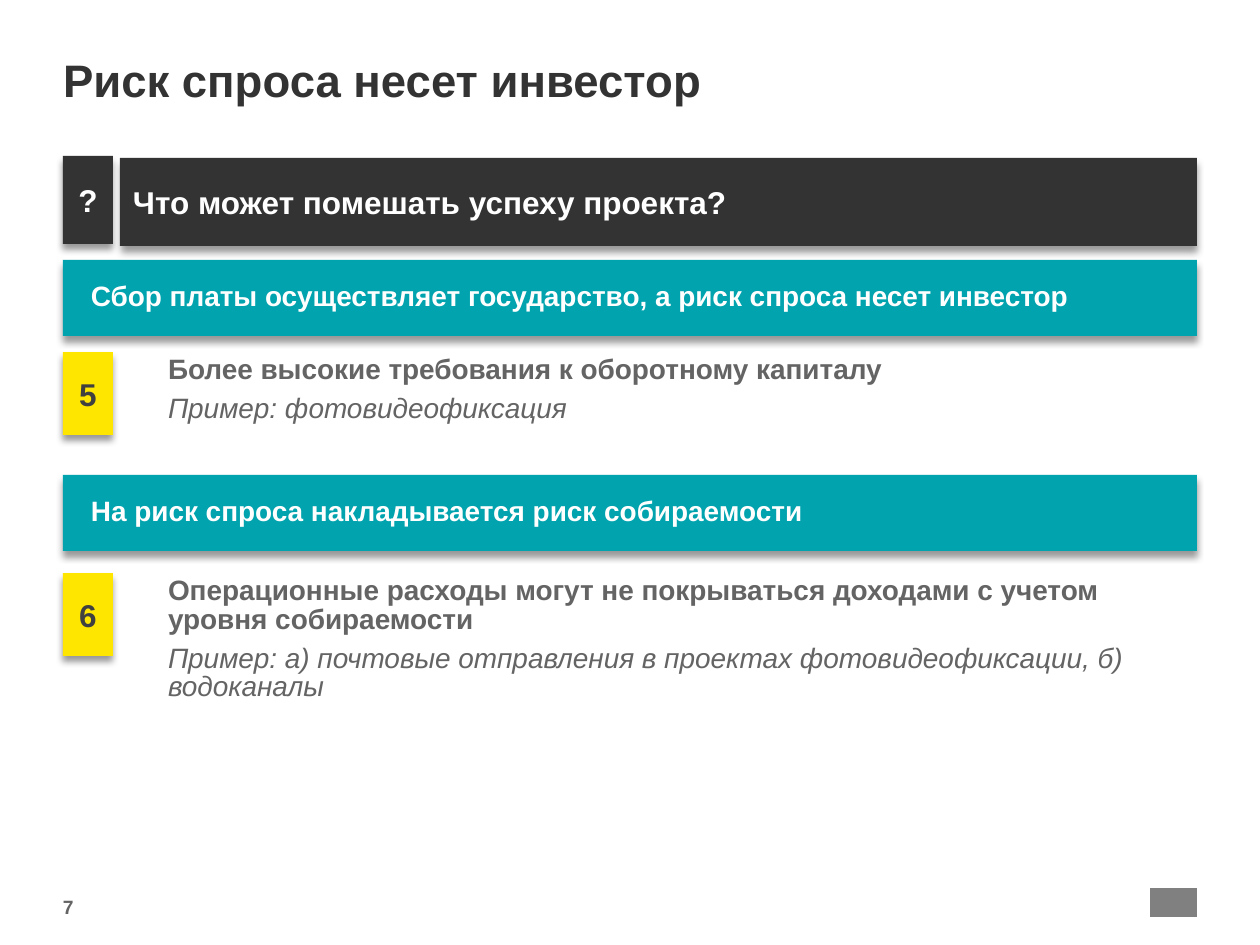
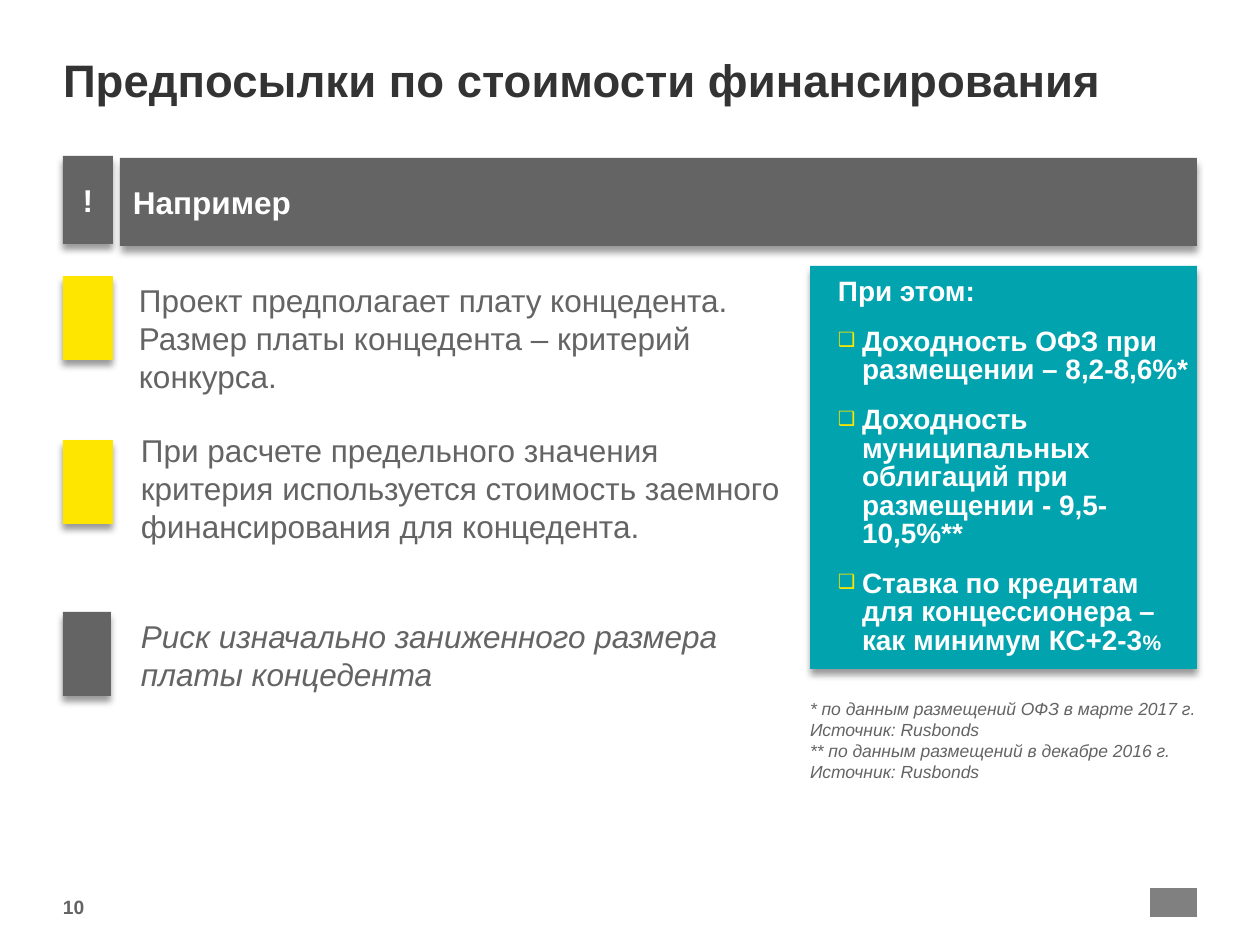
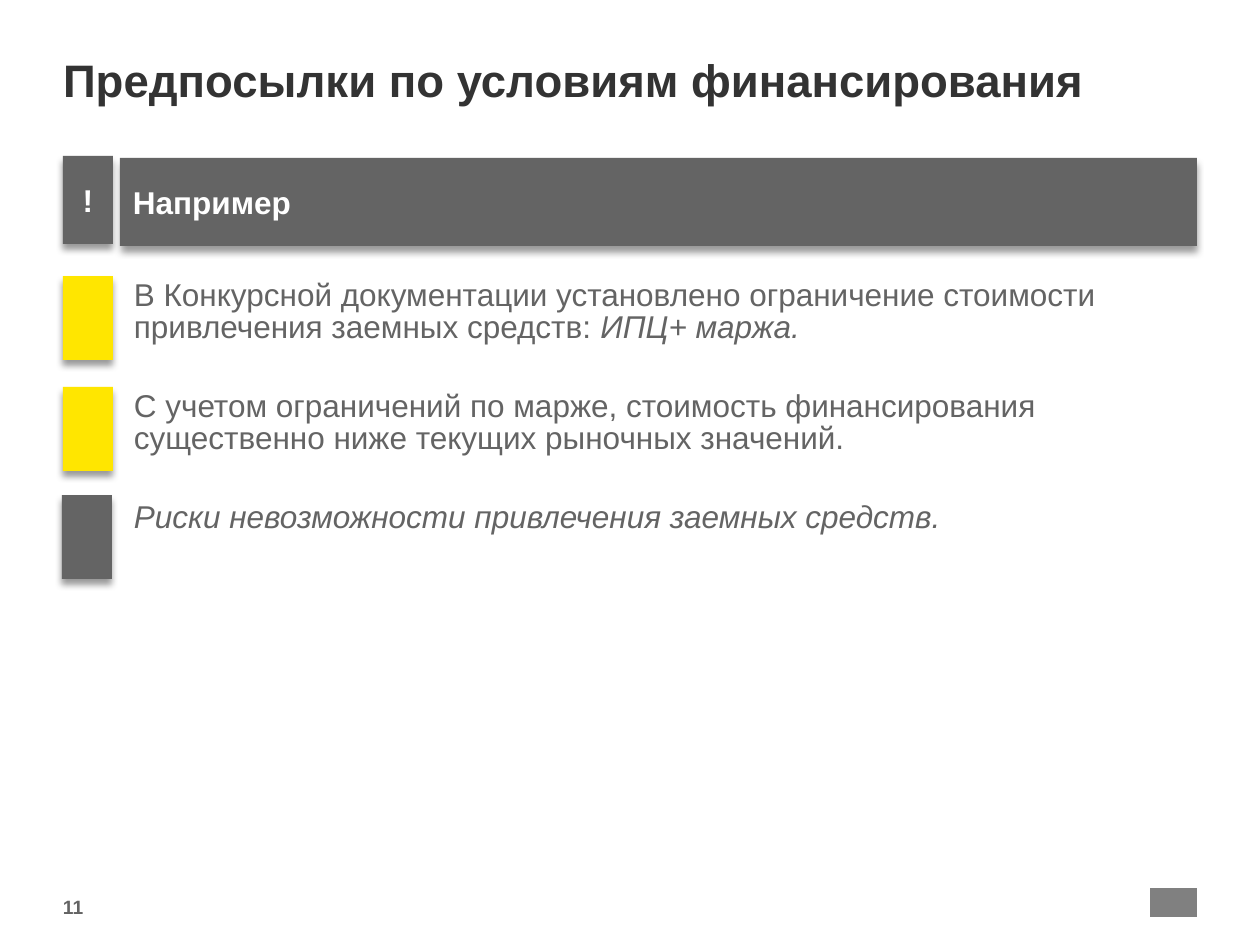
from dataclasses import dataclass, replace
from typing import Optional

from lxml.etree import SubElement
from pptx import Presentation
from pptx.dml.color import RGBColor
from pptx.enum.shapes import MSO_SHAPE
from pptx.enum.text import MSO_ANCHOR, MSO_AUTO_SIZE, PP_ALIGN
from pptx.oxml.ns import qn
from pptx.util import Emu, Pt

PX_PER_INCH = 126
TITLE_AND_CONTENT, TITLE_ONLY = 1, 5


@dataclass(frozen=True)
class Theme:
    font: str = "Arial"
    white: str = "FFFFFF"
    dark: str = "333333"
    digit: str = "404040"
    grey: str = "646464"
    logo: str = "808080"
    teal: str = "00A3AE"
    yellow: str = "FFE600"
    title_size: int = 26
    text_size: int = 18
    list_size: int = 16
    small_size: int = 12
    page_size: int = 11
    note_size: int = 10
    tight: float = 0.85
    gap: int = 6


THEME = Theme()


@dataclass(frozen=True)
class Box:
    left: int
    top: int
    width: int
    height: int


@dataclass(frozen=True)
class Style:
    size: int
    color: str
    bold: bool = False
    italic: bool = False


@dataclass(frozen=True)
class Line:
    text: str
    style: Style
    tail: str = ""
    tail_style: Optional[Style] = None
    spacing: float = 1.0
    before: int = 0
    after: int = 0
    margin: int = 0
    indent: int = 0
    bullet: str = ""
    align: PP_ALIGN = PP_ALIGN.LEFT


@dataclass(frozen=True)
class Frame:
    insets: tuple[int, int, int, int]
    anchor: MSO_ANCHOR
    fit: MSO_AUTO_SIZE = MSO_AUTO_SIZE.NONE


@dataclass(frozen=True)
class Item:
    marker: Box
    fill: str
    label: str
    text_box: Box
    lines: tuple[Line, ...]


TITLE = Style(THEME.title_size, THEME.dark, bold=True)
HEADING = Style(THEME.text_size, THEME.white, bold=True)
DIGIT = Style(THEME.text_size, THEME.digit, bold=True)
PLAIN = Style(THEME.text_size, THEME.grey)
RISK = replace(PLAIN, italic=True)
CLAIM = Style(THEME.list_size, THEME.grey, bold=True)
EXAMPLE = Style(THEME.list_size, THEME.grey, italic=True)
ON_TEAL = Style(THEME.list_size, THEME.white, bold=True)
NOTE = Style(THEME.note_size, THEME.grey, italic=True)
PAGE = Style(THEME.page_size, THEME.grey, bold=True)

BARE = Frame((0, 0, 0, 0), MSO_ANCHOR.TOP)
TITLE_FRAME = replace(BARE, anchor=MSO_ANCHOR.MIDDLE)
TEXT_FRAME = Frame((0, 5, 0, 0), MSO_ANCHOR.TOP, MSO_AUTO_SIZE.SHAPE_TO_FIT_TEXT)
BAND_FRAME = Frame((13, 6, 13, 6), MSO_ANCHOR.MIDDLE)
TEAL_FRAME = Frame((3, 3, 3, 3), MSO_ANCHOR.MIDDLE)

TITLE_BOX = Box(63, 25, 1134, 118)
MARK_BOX = Box(63, 156, 50, 88)
HEADING_BOX = Box(120, 158, 1077, 88)
PAGE_BOX = Box(63, 895, 100, 28)
LOGO_BOX = Box(1150, 888, 47, 29)


def px(length: int) -> Emu:
    return Emu(round(length * 914400 / PX_PER_INCH))


def place(shape, box: Box) -> None:
    shape.left, shape.top = px(box.left), px(box.top)
    shape.width, shape.height = px(box.width), px(box.height)


def format_span(span, style: Style) -> None:
    font = span.font
    font.name = THEME.font
    font.size = Pt(style.size)
    font.bold = style.bold
    font.italic = style.italic
    font.color.rgb = RGBColor.from_string(style.color)


def set_bullet(para, line: Line) -> None:
    props = para._p.get_or_add_pPr()
    props.set("marL", str(px(line.margin)))
    props.set("indent", str(px(line.indent)))
    if line.bullet:
        color = SubElement(props, qn("a:buClr"))
        SubElement(color, qn("a:srgbClr"), val=THEME.yellow)
        SubElement(props, qn("a:buSzPct"), val="70000")
        SubElement(props, qn("a:buChar"), char=line.bullet)
    else:
        SubElement(props, qn("a:buNone"))


def write(shape, frame: Frame, lines: tuple[Line, ...]) -> None:
    text_frame = shape.text_frame
    text_frame.text = "\n".join(line.text for line in lines)
    text_frame.word_wrap = True
    text_frame.auto_size = frame.fit
    text_frame.vertical_anchor = frame.anchor
    (text_frame.margin_left, text_frame.margin_top,
     text_frame.margin_right, text_frame.margin_bottom) = map(px, frame.insets)
    for para, line in zip(text_frame.paragraphs, lines):
        set_bullet(para, line)
        para.alignment = line.align
        para.line_spacing = line.spacing
        para.space_before = Pt(line.before)
        para.space_after = Pt(line.after)
        format_span(para.runs[0], line.style)
        if line.tail:
            span = para.add_run()
            span.text = line.tail
            format_span(span, line.tail_style or line.style)


def paint(shape, fill: str) -> None:
    shape.fill.solid()
    shape.fill.fore_color.rgb = RGBColor.from_string(fill)
    shape.line.fill.background()
    shape.shadow.inherit = False


def add_shadow(shape) -> None:
    effects = shape._element.spPr.find(qn("a:effectLst"))
    shadow = SubElement(effects, qn("a:outerShdw"), blurRad=str(Pt(4)),
                        dist=str(Pt(3)), dir="5400000", rotWithShape="0")
    color = SubElement(shadow, qn("a:srgbClr"), val="000000")
    SubElement(color, qn("a:alpha"), val="40000")


def add_rectangle(page, box: Box, fill: str):
    shape = page.shapes.add_shape(MSO_SHAPE.RECTANGLE, 0, 0, 0, 0)
    place(shape, box)
    paint(shape, fill)
    return shape


def add_panel(page, box: Box, fill: str, frame: Frame, *lines: Line) -> None:
    shape = add_rectangle(page, box, fill)
    add_shadow(shape)
    if lines:
        write(shape, frame, lines)


def add_text(page, box: Box, frame: Frame, *lines: Line) -> None:
    shape = page.shapes.add_textbox(0, 0, 0, 0)
    place(shape, box)
    write(shape, frame, lines)


def add_page(deck, layout: int, number: int, title: str, mark: str, heading: str, fill: str):
    page = deck.slides.add_slide(deck.slide_layouts[layout])
    place(page.shapes.title, TITLE_BOX)
    write(page.shapes.title, TITLE_FRAME, (Line(title, TITLE, spacing=THEME.tight),))
    add_text(page, PAGE_BOX, BARE, Line(str(number), PAGE))
    add_rectangle(page, LOGO_BOX, THEME.logo)
    add_panel(page, MARK_BOX, fill, BAND_FRAME, Line(mark, HEADING, align=PP_ALIGN.CENTER))
    add_panel(page, HEADING_BOX, fill, BAND_FRAME, Line(heading, HEADING))
    return page


def add_items(page, items: list[Item]) -> None:
    for item in items:
        label = (Line(item.label, DIGIT, align=PP_ALIGN.CENTER),) if item.label else ()
        add_panel(page, item.marker, item.fill, BAND_FRAME, *label)
        add_text(page, item.text_box, TEXT_FRAME, *item.lines)


def claim_item(number: int, top: int, height: int, claim: str, example: str) -> Item:
    return Item(Box(63, top, 50, 83), THEME.yellow, str(number), Box(168, top, 1029, height),
                (Line(claim, CLAIM, spacing=THEME.tight),
                 Line(example, EXAMPLE, spacing=THEME.tight, before=THEME.gap)))


def build_demand_risk(deck) -> None:
    page = add_page(deck, TITLE_ONLY, 7, "Риск спроса несет инвестор",
                    "?", "Что может помешать успеху проекта?", THEME.dark)
    bands = [
        (260, "Сбор платы осуществляет государство, а риск спроса несет инвестор"),
        (475, "На риск спроса накладывается риск собираемости"),
    ]
    for top, text in bands:
        add_panel(page, Box(63, top, 1134, 76), THEME.teal, TEAL_FRAME,
                  Line(text, ON_TEAL, spacing=THEME.tight, margin=25))
    add_items(page, [
        claim_item(5, 352, 73, "Более высокие требования к оборотному капиталу",
                   "Пример: фотовидеофиксация"),
        claim_item(6, 573, 131,
                   "Операционные расходы могут не покрываться доходами с учетом уровня собираемости",
                   "Пример: а) почтовые отправления в проектах фотовидеофиксации, б) водоканалы"),
    ])


def build_funding_cost(deck) -> None:
    page = add_page(deck, TITLE_AND_CONTENT, 10, "Предпосылки по стоимости финансирования",
                    "!", "Например", THEME.grey)
    add_items(page, [
        Item(Box(63, 276, 50, 84), THEME.yellow, "", Box(139, 276, 627, 120),
             (Line("Проект предполагает плату концедента.", PLAIN),
              Line("Размер платы концедента – критерий конкурса.", PLAIN))),
        Item(Box(63, 440, 50, 84), THEME.yellow, "", Box(141, 426, 646, 120),
             (Line("При расчете предельного значения критерия используется стоимость "
                   "заемного финансирования для концедента.", PLAIN),)),
        Item(Box(63, 612, 48, 84), THEME.grey, "", Box(141, 612, 646, 82),
             (Line("Риск изначально заниженного размера платы концедента", RISK),)),
    ])
    intro = Line("При этом:", ON_TEAL, spacing=THEME.tight, after=THEME.gap, margin=25)
    rate = replace(intro, before=THEME.gap, margin=49, indent=-24, bullet="❑")
    rates = page.placeholders[1]
    place(rates, Box(810, 266, 387, 403))
    paint(rates, THEME.teal)
    add_shadow(rates)
    write(rates, TEAL_FRAME, (
        intro,
        replace(rate, text="Доходность ОФЗ при размещении – 8,2-8,6%*"),
        replace(rate, text="Доходность муниципальных облигаций при размещении - 9,5-10,5%**"),
        replace(rate, text="Ставка по кредитам для концессионера – как минимум КС+2-3",
                tail="%", tail_style=replace(ON_TEAL, size=THEME.small_size)),
    ))
    add_text(page, Box(810, 693, 387, 89), TEXT_FRAME,
             Line("* по данным размещений ОФЗ в марте 2017 г. Источник: Rusbonds", NOTE),
             Line("** по данным размещений в декабре 2016 г. Источник: Rusbonds", NOTE))


def build_funding_terms(deck) -> None:
    page = add_page(deck, TITLE_ONLY, 11, "Предпосылки по условиям финансирования",
                    "!", "Например", THEME.grey)
    limit = Line("В Конкурсной документации установлено ограничение стоимости "
                 "привлечения заемных средств: ", PLAIN, tail="ИПЦ+ маржа.", tail_style=RISK,
                 spacing=THEME.tight, after=THEME.gap)
    margin = replace(limit, tail="", text="С учетом ограничений по марже, стоимость "
                     "финансирования существенно ниже текущих рыночных значений.")
    risk = replace(margin, text="Риски невозможности привлечения заемных средств.", style=RISK)
    add_items(page, [
        Item(Box(63, 276, 50, 84), THEME.yellow, "", Box(134, 276, 1061, 71), (limit,)),
        Item(Box(63, 387, 50, 84), THEME.yellow, "", Box(134, 387, 1061, 71), (margin,)),
        Item(Box(62, 495, 50, 84), THEME.grey, "", Box(134, 498, 1061, 38), (risk,)),
    ])


def main() -> None:
    deck = Presentation()
    deck.slide_width, deck.slide_height = px(1260), px(945)
    build_demand_risk(deck)
    build_funding_cost(deck)
    build_funding_terms(deck)
    deck.save("out.pptx")


if __name__ == "__main__":
    main()
